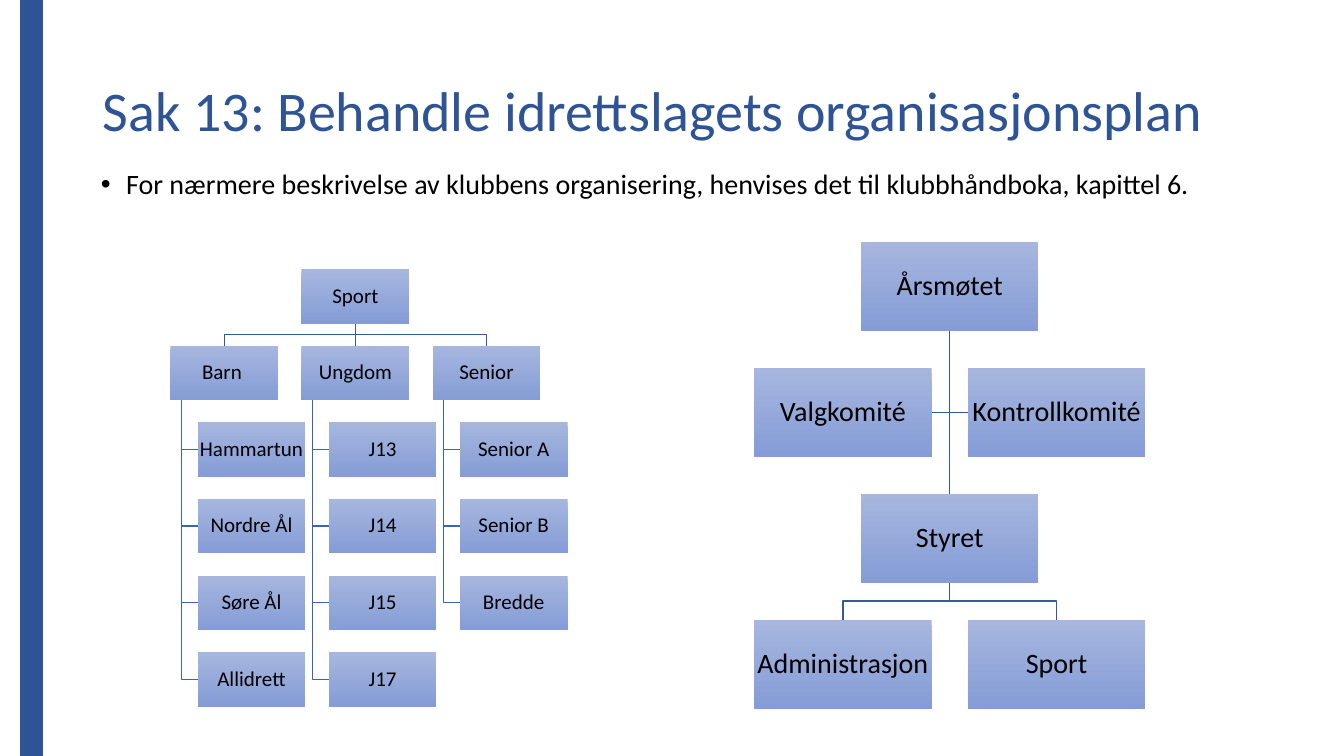
from lxml.etree import SubElement
from pptx import Presentation
from pptx.dml.color import RGBColor
from pptx.enum.shapes import MSO_CONNECTOR as Connector, MSO_SHAPE as Shape
from pptx.enum.text import MSO_ANCHOR as Anchor, MSO_AUTO_SIZE as AutoSize, PP_ALIGN as Align
from pptx.oxml.ns import qn
from pptx.util import Inches, Pt

BLUE, BLACK = "2F5496", "000000"
BOX_GRADIENT = ("A6B6DE", "859CD6")
CROSS_LINE, TRUNK_LINE = "345A99", "3A66B1"
TOP, LEFT, BOTTOM, RIGHT = 0, 1, 2, 3

SPORT_BRANCHES = {
    "Barn ": ["Hammartun", "Nordre Ål", "Søre Ål", "Allidrett"],
    "Ungdom": ["J13", "J14", "J15", "J17"],
    "Senior": ["Senior A", "Senior B", "Bredde"],
}
SPORT_GRID = {"left": 1.69, "top": 2.67, "column": 1.3, "row": 0.76,
              "width": 1.07, "height": 0.54, "size": 15}
CLUB_GRID = {"left": 7.48, "top": 2.4, "column": 1.06, "row": 1.25,
             "width": 1.76, "height": 0.88, "size": 20}


def color(hex_value):
    return RGBColor.from_string(hex_value)


def set_attributes(target, values):
    for name, value in values.items():
        setattr(target, name, value)


def set_text(shape, text, size, hex_color, frame_format, paragraph_format):
    frame = shape.text_frame
    frame.text = text
    set_attributes(frame, {"word_wrap": True, "auto_size": AutoSize.NONE, **frame_format})
    paragraph = frame.paragraphs[0]
    set_attributes(paragraph, {"line_spacing": 0.9, "space_before": Pt(0), **paragraph_format})
    font = paragraph.runs[0].font
    set_attributes(font, {"name": "Calibri", "size": Pt(size)})
    font.color.rgb = color(hex_color)
    return paragraph


def place(shape, left, top, width, height):
    set_attributes(shape, {"left": Inches(left), "top": Inches(top),
                           "width": Inches(width), "height": Inches(height)})


def style_line(shape, hex_color):
    shape.line.color.rgb = color(hex_color)
    shape.line.width = Pt(1)


def add_headings(slide):
    title, body = slide.placeholders
    place(title, 0.92, 0.4, 11.5, 1.45)
    set_text(title, "Sak 13: Behandle idrettslagets organisasjonsplan", 40, BLUE,
             {"vertical_anchor": Anchor.MIDDLE}, {"alignment": Align.LEFT})
    place(body, 0.9, 1.64, 11.5, 4.76)
    paragraph = set_text(
        body, "For nærmere beskrivelse av klubbens organisering, "
        "henvises det til klubbhåndboka, kapittel 6.", 20, BLACK,
        {"vertical_anchor": Anchor.TOP}, {"alignment": Align.LEFT})
    properties = paragraph._p.get_or_add_pPr()
    properties.set("marL", str(Inches(0.25)))
    properties.set("indent", str(Inches(-0.25)))
    SubElement(properties, qn("a:buChar"), char="•")


def add_side_bar(slide):
    bar = slide.shapes.add_shape(Shape.RECTANGLE, Inches(0.21), Inches(-0.16),
                                 Inches(0.21), Inches(7.83))
    bar.shadow.inherit = False
    bar.fill.solid()
    bar.fill.fore_color.rgb = color(BLUE)
    style_line(bar, "31538F")


def add_box(slide, grid, text, column, row, indent=0):
    """Add a box at a grid cell; column may be fractional."""
    box = slide.shapes.add_shape(
        Shape.RECTANGLE, Inches(grid["left"] + column * grid["column"] + indent),
        Inches(grid["top"] + row * grid["row"]), Inches(grid["width"]), Inches(grid["height"]))
    box.shadow.inherit = False
    box.fill.gradient()
    box.fill.gradient_angle = 270
    for stop, hex_color in zip(box.fill.gradient_stops, BOX_GRADIENT):
        stop.color.rgb = color(hex_color)
    box.line.fill.background()
    margins = {f"margin_{side}": Inches(0.01) for side in ("left", "top", "right", "bottom")}
    set_text(box, text, grid["size"], BLACK, {"vertical_anchor": Anchor.MIDDLE, **margins},
             {"alignment": Align.CENTER})
    return box


def join(slide, start, start_side, end, end_side):
    """Draw a straight connector between the sides of two boxes."""
    connector = slide.shapes.add_connector(Connector.STRAIGHT, 0, 0, 0, 0)
    connector.begin_connect(start, start_side)
    connector.end_connect(end, end_side)
    style_line(connector, CROSS_LINE)
    SubElement(connector._element.spPr, qn("a:effectLst"))


def add_polyline(slide, points, hex_color):
    builder = slide.shapes.build_freeform(*points[0])
    builder.add_line_segments(points[1:], close=False)
    polyline = builder.convert_to_shape()
    polyline.shadow.inherit = False
    polyline.fill.background()
    style_line(polyline, hex_color)


def fork(slide, parent, child):
    """Draw down, across and down from parent to child."""
    start_x, end_x = (box.left + box.width // 2 for box in (parent, child))
    bottom = parent.top + parent.height
    middle = (bottom + child.top) // 2
    add_polyline(slide, [(start_x, bottom), (start_x, middle),
                         (end_x, middle), (end_x, child.top)], CROSS_LINE)


def hang(slide, parent, child):
    """Draw down and right from parent to the left side of child."""
    trunk = parent.left + Inches(0.11)
    middle = child.top + child.height // 2
    add_polyline(slide, [(trunk, parent.top + parent.height), (trunk, middle),
                         (child.left, middle)], TRUNK_LINE)


def add_sport_chart(slide):
    sport = add_box(slide, SPORT_GRID, "Sport", 1, 0)
    for column, (name, teams) in enumerate(SPORT_BRANCHES.items()):
        branch = add_box(slide, SPORT_GRID, name, column, 1)
        if column == 1:
            join(slide, sport, BOTTOM, branch, TOP)
        else:
            fork(slide, sport, branch)
        for row, team in enumerate(teams, start=2):
            hang(slide, branch, add_box(slide, SPORT_GRID, team, column, row, indent=0.27))


def add_club_chart(slide):
    meeting = add_box(slide, CLUB_GRID, "Årsmøtet", 1, 0)
    nomination = add_box(slide, CLUB_GRID, "Valgkomité", 0, 1)
    control = add_box(slide, CLUB_GRID, "Kontrollkomité", 2, 1)
    board = add_box(slide, CLUB_GRID, "Styret", 1, 2)
    join(slide, meeting, BOTTOM, board, TOP)
    join(slide, nomination, RIGHT, control, LEFT)
    for column, name in ((0, "Administrasjon"), (2, "Sport")):
        fork(slide, board, add_box(slide, CLUB_GRID, name, column, 3))


def main():
    presentation = Presentation()
    presentation.slide_width = Inches(13.33)
    presentation.slide_height = Inches(7.5)
    slide = presentation.slides.add_slide(presentation.slide_layouts[1])
    add_headings(slide)
    add_side_bar(slide)
    add_sport_chart(slide)
    add_club_chart(slide)
    presentation.save("out.pptx")


if __name__ == "__main__":
    main()
